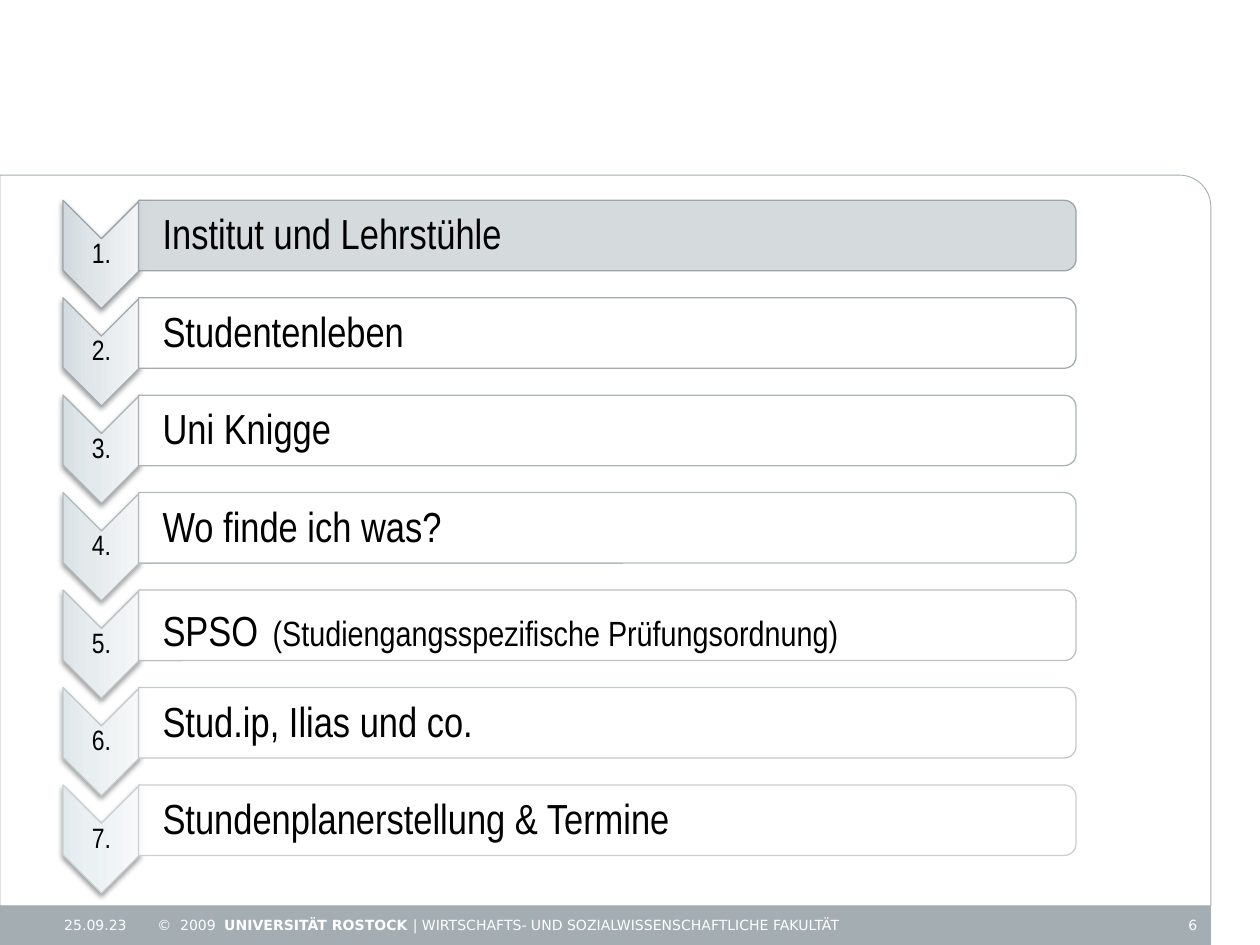
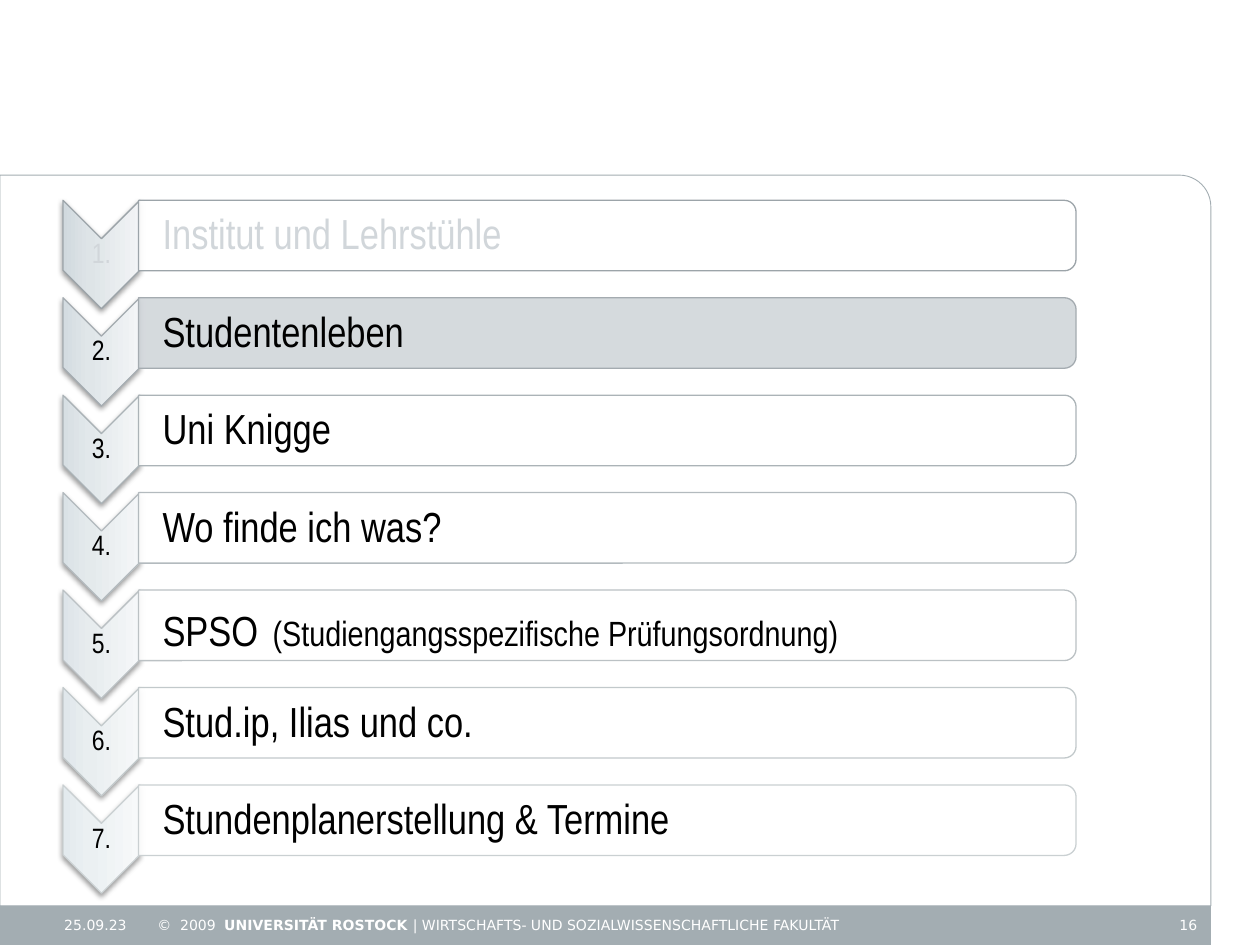
from lxml import etree
from pptx import Presentation
from pptx.dml.color import RGBColor
from pptx.enum.shapes import MSO_SHAPE as SHAPE
from pptx.enum.text import MSO_ANCHOR as ANCHOR, PP_ALIGN as ALIGN
from pptx.oxml.ns import qn
from pptx.util import Inches, Pt

AGENDA = [
    [("Institut und Lehrstühle", 24)],
    [("Studentenleben", 24)],
    [("Uni Knigge", 24)],
    [("Wo finde ich was?", 24)],
    [("SPSO", 24), (" ", 36), ("(Studiengangsspezifische Prüfungsordnung)", 20)],
    [("Stud.ip, Ilias und co.", 24)],
    [("Stundenplanerstellung & Termine", 24)],
]
LAST = len(AGENDA) - 1
TOP, PITCH = 1.59, 4.64 / LAST
# Colours of the first and the last step; those between are blended
OUTLINE = ("9CA4A9", "CAD0D2")
GRADIENT = [(0, "D1D9DE", "E3EAEE"), (35, "DEE4E7", "EBF0F2"), (100, "F2F4F6", "F7F9FA")]


def rgb(color):
    return RGBColor.from_string(color)


def blend(first, last, share):
    pairs = zip(bytes.fromhex(first), bytes.fromhex(last))
    return "".join(f"{round(a + (b - a) * share):02X}" for a, b in pairs)


def sub(parent, tag, **attrs):
    return etree.SubElement(parent, qn(tag), attrs)


class Deck:
    """Holds the style and the current slide."""
    FOOTER_FONT, BODY_FONT = "DejaVu Sans", "Arial Narrow"
    BAND, ACTIVE, WHITE, BLACK = "A3ADB2", "D1D6DA", "FFFFFF", "000000"

    def __init__(self):
        self.prs = Presentation()
        self.prs.slide_width, self.prs.slide_height = Inches(10), Inches(7.5)

    def new_slide(self, number):
        self.slide = self.prs.slides.add_slide(self.prs.slide_layouts[6])
        self.shape(SHAPE.RECTANGLE, 0, 7.19, 9.61, 0.31, self.BAND, 0.5, self.BAND)
        frame = self.shape(SHAPE.ROUND_1_RECTANGLE, 0, 1.39, 9.61, 5.8, self.BAND, 0.5)
        frame.adjustments[0] = 0.25 / 5.8
        self.footer_text(0.51, 0.73, [("25.09.23", False)])
        self.footer_text(9.11, 0.49, [(str(number), False)], ALIGN.RIGHT, (0.1, 0.05, 0.1, 0.05))
        self.footer_text(1.25, 7.87, [
            ("©\t2009\t", False), ("UNIVERSITÄT ROSTOCK ", True),
            ("| WIRTSCHAFTS- UND SOZIALWISSENSCHAFTLICHE FAKULTÄT", False)], tabs=(0.18, 0.53))

    def shape(self, kind, x, y, w, h, line, line_width, fill=None):
        sp = self.slide.shapes.add_shape(kind, Inches(x), Inches(y), Inches(w), Inches(h))
        sp.shadow.inherit = False
        sp.line.color.rgb = rgb(line)
        sp.line.width = Pt(line_width)
        if fill:
            sp.fill.solid()
            sp.fill.fore_color.rgb = rgb(fill)
        else:
            sp.fill.background()
        return sp

    def turned(self, kind, x, y, w, h, line, fill=None):
        """Shape turned by 90 degrees that covers the given area once turned."""
        shift = (w - h) / 2
        sp = self.shape(kind, x + shift, y - shift, h, w, line, 0.75, fill)
        sp.rotation = 90
        return sp

    def text(self, x, y, w, h, runs, font, align=ALIGN.LEFT, insets=(0, 0.05, 0, 0.05),
             spacing=1.0, tabs=()):
        """Text box; each run is (text, size, colour, bold)."""
        tf = self.slide.shapes.add_textbox(Inches(x), Inches(y), Inches(w), Inches(h)).text_frame
        tf.word_wrap = True
        tf.vertical_anchor = ANCHOR.MIDDLE
        tf.margin_left, tf.margin_top, tf.margin_right, tf.margin_bottom = map(Inches, insets)
        p = tf.paragraphs[0]
        p.alignment, p.line_spacing = align, spacing
        if tabs:
            stops = sub(p._p.get_or_add_pPr(), "a:tabLst")
            for pos in tabs:
                sub(stops, "a:tab", pos=str(Inches(pos)), algn="l")
        for content, size, color, bold in runs:
            r = p.add_run()
            r.text = content
            r.font.name, r.font.size, r.font.bold = font, Pt(size), bold
            r.font.color.rgb = rgb(color)

    def footer_text(self, x, w, parts, align=ALIGN.LEFT, insets=(0, 0.05, 0, 0.05), tabs=()):
        runs = [(content, 8, self.WHITE, bold) for content, bold in parts]
        self.text(x, 7.18, w, 0.32, runs, self.FOOTER_FONT, align, insets, tabs=tabs)

    def chevron(self, y, share):
        sp = self.turned(SHAPE.CHEVRON, 0.5, y, 0.61, 0.86, blend(*OUTLINE, share))
        sp.fill.gradient()
        sp.fill.gradient_angle = 90
        props = sp._element.spPr
        stops = props.find(".//" + qn("a:gsLst"))
        for stop in list(stops):
            stops.remove(stop)
        for pos, first, last in GRADIENT:
            stop = sub(stops, "a:gs", pos=str(pos * 1000))
            sub(stop, "a:srgbClr", val=blend(first, last, share))
        shadow = sub(props.find(qn("a:effectLst")), "a:outerShdw", blurRad=str(Pt(3.1)),
                     dist=str(Pt(1.6)), dir="5400000", rotWithShape="0")
        sub(sub(shadow, "a:srgbClr", val=self.BLACK), "a:alpha", val="38000")

    def bar(self, y, share, fill):
        sp = self.turned(SHAPE.ROUND_2_SAME_RECTANGLE, 1.1, y, 7.44, 0.56,
                         blend(*OUTLINE, share), fill)
        color = sp._element.spPr.find(qn("a:solidFill")).find(qn("a:srgbClr"))
        sub(color, "a:alpha", val="90000")

    def agenda(self, active):
        """Agenda with one step highlighted and the steps before it greyed out."""
        for i, parts in enumerate(AGENDA):
            y, share = TOP + i * PITCH, i / LAST
            color = self.ACTIVE if i < active else self.BLACK
            self.chevron(y, share)
            self.text(0.5, y + 0.3, 0.61, 0.26, [(f"{i + 1}.", 16, color, False)],
                      self.BODY_FONT, ALIGN.CENTER, (0.01,) * 4, 0.9)
            self.bar(y, share, self.ACTIVE if i == active else self.WHITE)
            self.text(1.1, y + 0.03, 7.42, 0.51,
                      [(content, size, color, False) for content, size in parts],
                      self.BODY_FONT, insets=(0.19, 0.02, 0.02, 0.02), spacing=0.9)


def main():
    deck = Deck()
    for active, number in enumerate((6, 16)):
        deck.new_slide(number)
        deck.agenda(active)
    deck.prs.save("out.pptx")


if __name__ == "__main__":
    main()
